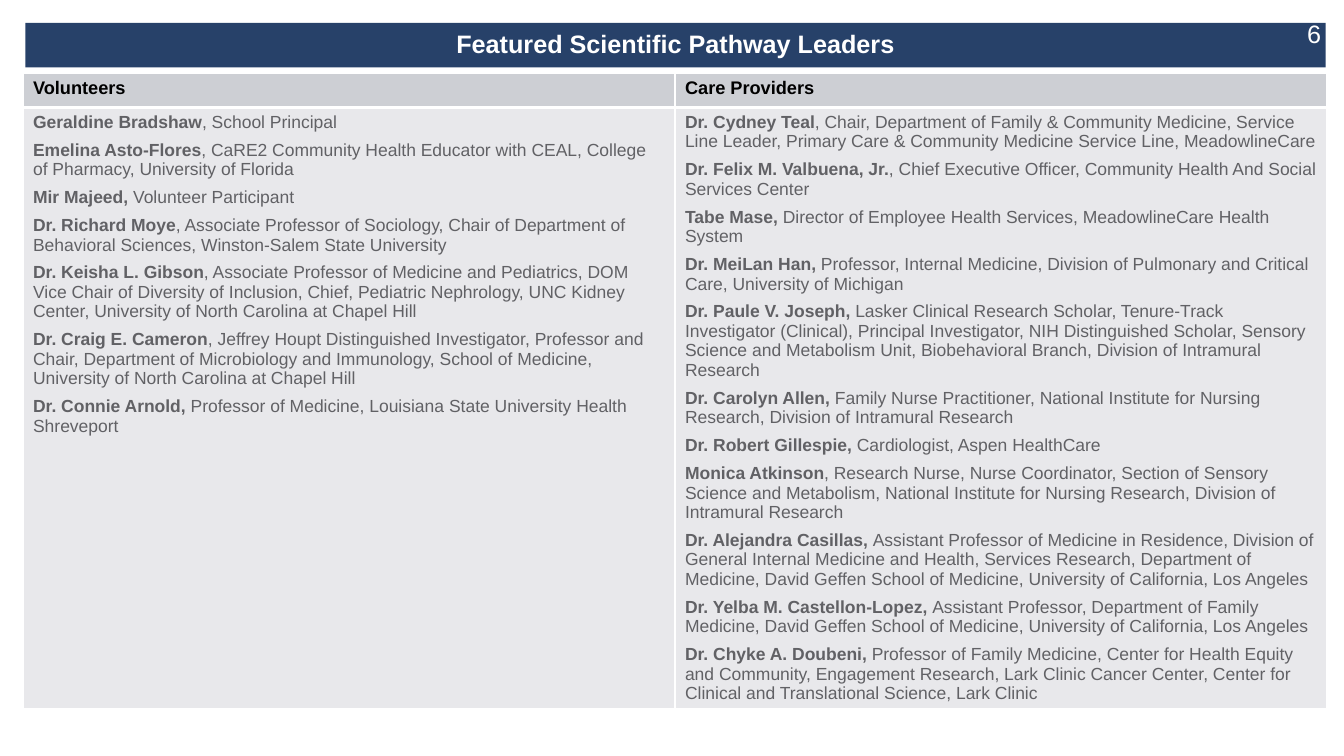
import pptx
import pptx.dml.color
import pptx.enum.shapes
import pptx.enum.text
import pptx.oxml
import pptx.oxml.ns
import pptx.util

Cm, Pt = pptx.util.Cm, pptx.util.Pt

TITLE = "Featured Scientific Pathway Leaders"
PAGE_NUMBER = "6"
LEADERS = {
    "Volunteers": [
        ("Geraldine Bradshaw", ", School Principal"),
        ("Emelina Asto-Flores", ", CaRE2 Community Health Educator with CEAL, College of Pharmacy, "
         "University of Florida"),
        ("Mir Majeed, ", "Volunteer Participant"),
        ("Dr. Richard Moye", ", Associate Professor of Sociology, Chair of Department of "
         "Behavioral Sciences, Winston-Salem State University"),
        ("Dr. Keisha L. Gibson", ", Associate Professor of Medicine and Pediatrics, DOM Vice Chair "
         "of Diversity of Inclusion, Chief, Pediatric Nephrology, UNC Kidney Center, University "
         "of North Carolina at Chapel Hill"),
        ("Dr. Craig E. Cameron", ", Jeffrey Houpt Distinguished Investigator, Professor and "
         "Chair, Department of Microbiology and Immunology, School of Medicine, University "
         "of North Carolina at Chapel Hill"),
        ("Dr. Connie Arnold, ", "Professor of Medicine, Louisiana State University Health "
         "Shreveport"),
    ],
    "Care Providers": [
        ("Dr. Cydney Teal", ", Chair, Department of Family & Community Medicine, Service Line "
         "Leader, Primary Care & Community Medicine Service Line, MeadowlineCare"),
        ("Dr. Felix M. Valbuena, Jr.", ", Chief Executive Officer, Community Health And Social "
         "Services Center"),
        ("Tabe Mase, ", "Director of Employee Health Services, MeadowlineCare Health System"),
        ("Dr. MeiLan Han, ", "Professor, Internal Medicine, Division of Pulmonary and Critical "
         "Care, University of Michigan"),
        ("Dr. Paule V. Joseph, ", "Lasker Clinical Research Scholar, Tenure-Track Investigator "
         "(Clinical), Principal Investigator, NIH Distinguished Scholar, Sensory Science and "
         "Metabolism Unit, Biobehavioral Branch, Division of Intramural Research"),
        ("Dr. Carolyn Allen, ", "Family Nurse Practitioner, National Institute for Nursing "
         "Research, Division of Intramural Research"),
        ("Dr. Robert Gillespie, ", "Cardiologist, Aspen HealthCare"),
        ("Monica Atkinson", ", Research Nurse, Nurse Coordinator, Section of Sensory Science and "
         "Metabolism, National Institute for Nursing Research, Division of Intramural Research"),
        ("Dr. Alejandra Casillas, ", "Assistant Professor of Medicine in Residence, Division of "
         "General Internal Medicine and Health, Services Research, Department of Medicine, "
         "David Geffen School of Medicine, University of California, Los Angeles"),
        ("Dr. Yelba M. Castellon-Lopez, ", "Assistant Professor, Department of Family Medicine, "
         "David Geffen School of Medicine, University of California, Los Angeles"),
        ("Dr. Chyke A. Doubeni, ", "Professor of Family Medicine, Center for Health Equity and "
         "Community, Engagement Research, Lark Clinic Cancer Center, Center for Clinical and "
         "Translational Science, Lark Clinic"),
    ],
}

THEME = {
    "font": "Arial",
    "navy": "274169", "white": "FFFFFF", "black": "000000", "gray": "616165",
    "header_fill": "CDCFD4", "body_fill": "E8E8EB",
    "title_size": 18, "header_size": 13, "body_size": 12.5,
}
TITLE_BAR = (0.64, 0.58, 32.77, 1.12)
NUMBER_BOX = (32.69, 0.33, 1.14, 1.02)
TABLE_LEFT, TABLE_TOP = 0.58, 1.85
COLUMN_WIDTH = 16.43
ROW_HEIGHTS = (0.86, 14.88)


def rgb(name):
    return pptx.dml.color.RGBColor.from_string(THEME[name])


def add_span(para, text, size, color, bold=False):
    span = para.add_run()
    span.text = text
    style = {"name": THEME["font"], "size": Pt(THEME[size]), "bold": bold}
    for key, value in style.items():
        setattr(span.font, key, value)
    span.font.color.rgb = rgb(color)


def style_cell(cell, fill, bottom_width):
    """Give a cell white borders, then its fill, in schema order."""
    properties = cell._tc.get_or_add_tcPr()
    for side, width in {"L": 1, "R": 1, "T": 1, "B": bottom_width}.items():
        properties.append(pptx.oxml.parse_xml(
            f'<a:ln{side} {pptx.oxml.ns.nsdecls("a")} w="{Pt(width)}"><a:solidFill>'
            f'<a:srgbClr val="{THEME["white"]}"/></a:solidFill></a:ln{side}>'))
    cell.fill.solid()
    cell.fill.fore_color.rgb = rgb(fill)


def add_title(page):
    bar = page.shapes.add_shape(
        pptx.enum.shapes.MSO_SHAPE.RECTANGLE, *map(Cm, TITLE_BAR))
    bar.shadow.inherit = False
    bar.fill.solid()
    bar.fill.fore_color.rgb = rgb("navy")
    bar.line.fill.background()
    bar.text_frame.vertical_anchor = pptx.enum.text.MSO_ANCHOR.MIDDLE
    para = bar.text_frame.paragraphs[0]
    para.alignment = pptx.enum.text.PP_ALIGN.CENTER
    para.line_spacing = 0.9
    add_span(para, TITLE, "title_size", "white", True)


def add_leaders(page):
    table = page.shapes.add_table(
        len(ROW_HEIGHTS), len(LEADERS), Cm(TABLE_LEFT), Cm(TABLE_TOP),
        Cm(COLUMN_WIDTH * len(LEADERS)), Cm(sum(ROW_HEIGHTS))).table
    table.horz_banding = False
    for row, height in zip(table.rows, ROW_HEIGHTS):
        row.height = Cm(height)
    for index, (group, people) in enumerate(LEADERS.items()):
        table.columns[index].width = Cm(COLUMN_WIDTH)
        header, body = table.cell(0, index), table.cell(1, index)
        style_cell(header, "header_fill", 3)
        style_cell(body, "body_fill", 1)
        para = header.text_frame.paragraphs[0]
        para.space_after = Pt(6)
        add_span(para, group, "header_size", "black", True)
        frame = body.text_frame
        for number, (name, role) in enumerate(people):
            para = frame.add_paragraph() if number else frame.paragraphs[0]
            para.space_after = Pt(6 if number < len(people) - 1 else 0)
            add_span(para, name, "body_size", "gray", True)
            add_span(para, role, "body_size", "gray")


def add_page_number(page):
    box = page.shapes.add_textbox(*map(Cm, NUMBER_BOX))
    box.text_frame.word_wrap = True
    add_span(box.text_frame.paragraphs[0], PAGE_NUMBER, "title_size", "white")


def main():
    deck = pptx.Presentation()
    deck.slide_width, deck.slide_height = Cm(33.87), Cm(19.05)
    page = deck.slides.add_slide(deck.slide_layouts[6])
    add_title(page)
    add_leaders(page)
    add_page_number(page)
    deck.save("out.pptx")


if __name__ == "__main__":
    main()
